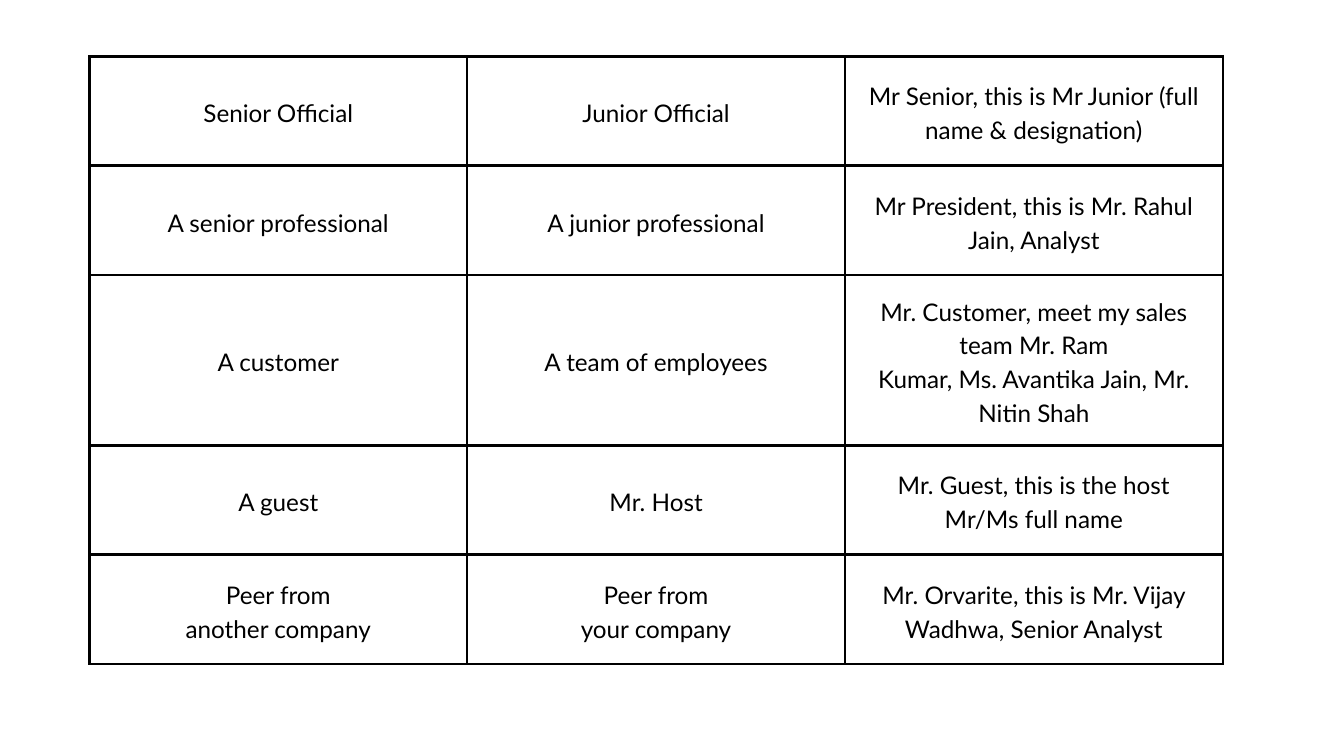
from dataclasses import dataclass

from lxml import etree
from pptx import Presentation
from pptx import util as u
from pptx.dml.color import RGBColor
from pptx.enum import text
from pptx.oxml import ns


@dataclass(frozen=True)
class Theme:
    font: str = "Lato"
    ink: str = "000000"
    size: u.Pt = u.Pt(26)
    leading: u.Pt = u.Pt(36.4)
    border: u.Pt = u.Pt(3)
    padding: u.Cm = u.Cm(0.53)


THEME = Theme()
BLANK_LAYOUT = 6
COLUMN_WIDTH = u.Cm(14.28)
ROW_HEIGHT = u.Cm(4.13)
TALL_ROW_HEIGHT = u.Cm(6.45)

# Senior person, junior person, words of introduction; a line break starts a paragraph.
INTRODUCTIONS = [
    ("Senior Official", "Junior Official",
     "Mr Senior, this is Mr Junior (full name & designation)"),
    ("A senior professional", "A junior professional",
     "Mr President, this is Mr. Rahul Jain, Analyst"),
    ("A customer", "A team of employees",
     "Mr. Customer, meet my sales team Mr. Ram\n"
     "Kumar, Ms. Avantika Jain, Mr. Nitin Shah"),
    ("A guest", "Mr. Host",
     "Mr. Guest, this is the host Mr/Ms full name"),
    ("Peer from\nanother company", "Peer from\nyour company",
     "Mr. Orvarite, this is Mr. Vijay Wadhwa, Senior Analyst"),
]
ROW_HEIGHTS = [ROW_HEIGHT, ROW_HEIGHT, TALL_ROW_HEIGHT, ROW_HEIGHT, ROW_HEIGHT]


def add_borders(cell):
    properties = cell._tc.get_or_add_tcPr()
    for side in ("a:lnL", "a:lnR", "a:lnT", "a:lnB"):
        line = etree.SubElement(properties, ns.qn(side), w=str(THEME.border))
        fill = etree.SubElement(line, ns.qn("a:solidFill"))
        etree.SubElement(fill, ns.qn("a:srgbClr"), val=THEME.ink)


def write_paragraph(paragraph, wording):
    paragraph.alignment = text.PP_ALIGN.CENTER
    paragraph.line_spacing = THEME.leading
    run = paragraph.add_run()
    run.text = wording
    run.font.name = THEME.font
    run.font.size = THEME.size
    run.font.color.rgb = RGBColor.from_string(THEME.ink)


def fill_cell(cell, wording):
    add_borders(cell)
    cell.fill.background()
    cell.vertical_anchor = text.MSO_ANCHOR.MIDDLE
    cell.margin_left = cell.margin_right = THEME.padding
    cell.margin_top = cell.margin_bottom = THEME.padding
    frame = cell.text_frame
    for index, line in enumerate(wording.split("\n")):
        paragraph = frame.add_paragraph() if index else frame.paragraphs[0]
        write_paragraph(paragraph, line)


def add_introduction_table(slide, left, top):
    column_count = len(INTRODUCTIONS[0])
    table = slide.shapes.add_table(
        len(INTRODUCTIONS), column_count, left, top,
        COLUMN_WIDTH * column_count, sum(ROW_HEIGHTS)).table
    table.first_row = False
    table.horz_banding = False
    for column in table.columns:
        column.width = COLUMN_WIDTH
    for row, height, wordings in zip(table.rows, ROW_HEIGHTS, INTRODUCTIONS):
        row.height = height
        for cell, wording in zip(row.cells, wordings):
            fill_cell(cell, wording)


def main():
    presentation = Presentation()
    presentation.slide_width = u.Cm(50.8)
    presentation.slide_height = u.Cm(28.58)
    slide = presentation.slides.add_slide(presentation.slide_layouts[BLANK_LAYOUT])
    add_introduction_table(slide, u.Cm(3.38), u.Cm(2.13))
    presentation.save("out.pptx")


if __name__ == "__main__":
    main()
